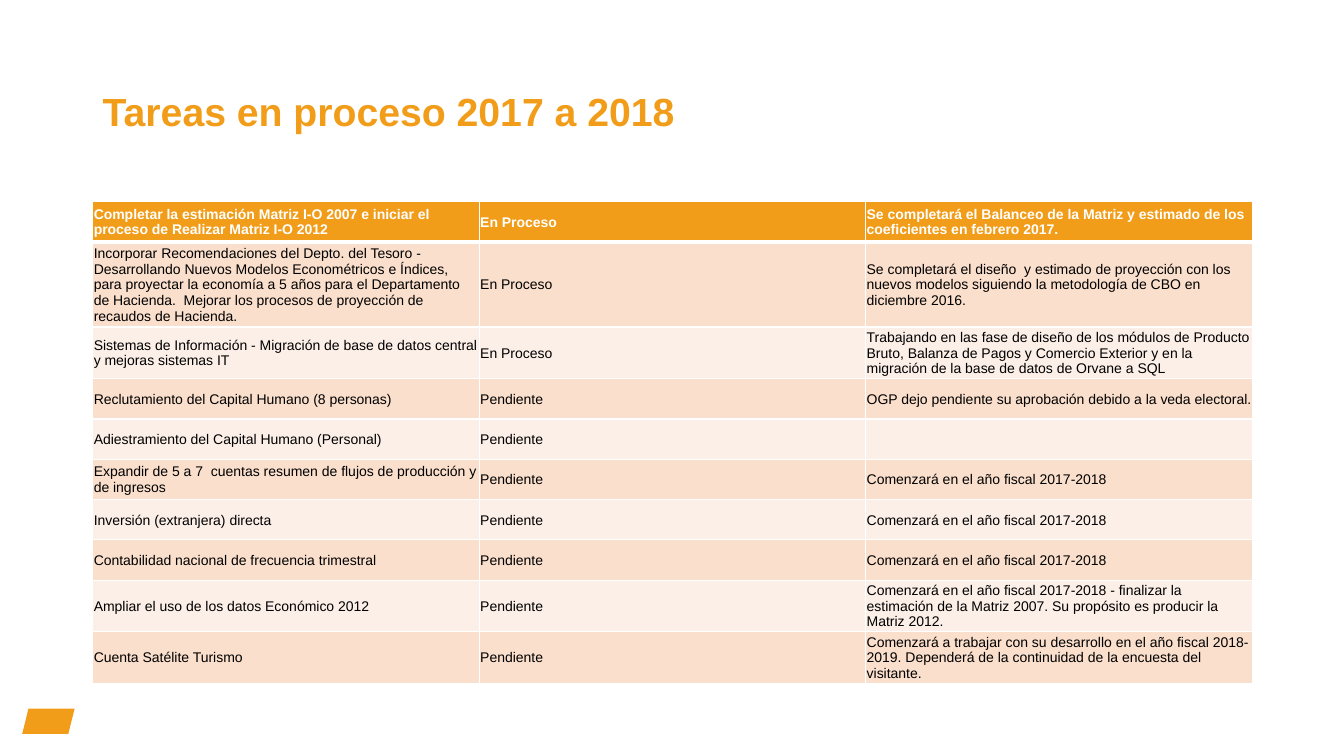
from lxml import etree
from pptx import Presentation
from pptx import util as u
from pptx.dml.color import RGBColor
from pptx.enum import shapes, text
from pptx.oxml.ns import qn

ORANGE = RGBColor(0xF1, 0x9D, 0x19)
PEACH = RGBColor(0xFA, 0xDF, 0xCC)
CREAM = RGBColor(0xFC, 0xEF, 0xE8)
WHITE = RGBColor(0xFF, 0xFF, 0xFF)
BLACK = RGBColor(0, 0, 0)

FISCAL = "Comenzará en el año fiscal 2017-2018"
TASKS = [
    ("Completar la estimación Matriz I-O 2007 e iniciar el proceso de Realizar Matriz I-O 2012",
     "En Proceso",
     "Se completará el Balanceo de la Matriz y estimado de los coeficientes en febrero 2017."),
    ("Incorporar Recomendaciones del Depto. del Tesoro - Desarrollando Nuevos Modelos "
     "Econométricos e Índices, para proyectar la economía a 5 años para el Departamento de "
     "Hacienda.  Mejorar los procesos de proyección de recaudos de Hacienda.",
     "En Proceso",
     "Se completará el diseño  y estimado de proyección con los nuevos modelos siguiendo la "
     "metodología de CBO en diciembre 2016."),
    ("Sistemas de Información - Migración de base de datos central y mejoras sistemas IT",
     "En Proceso",
     "Trabajando en las fase de diseño de los módulos de Producto Bruto, Balanza de Pagos y "
     "Comercio Exterior y en la migración de la base de datos de Orvane a SQL"),
    ("Reclutamiento del Capital Humano (8 personas)", "Pendiente",
     "OGP dejo pendiente su aprobación debido a la veda electoral."),
    ("Adiestramiento del Capital Humano (Personal)", "Pendiente", ""),
    ("Expandir de 5 a 7  cuentas resumen de flujos de producción y de ingresos",
     "Pendiente", FISCAL),
    ("Inversión (extranjera) directa", "Pendiente", FISCAL),
    ("Contabilidad nacional de frecuencia trimestral", "Pendiente", FISCAL),
    ("Ampliar el uso de los datos Económico 2012", "Pendiente",
     FISCAL + " - finalizar la estimación de la Matriz 2007. Su propósito es producir la "
     "Matriz 2012."),
    ("Cuenta Satélite Turismo", "Pendiente",
     "Comenzará a trabajar con su desarrollo en el año fiscal 2018-2019. Dependerá de la "
     "continuidad de la encuesta del visitante."),
]


def write(frame, words, size=10, color=BLACK, bold=False, space=1.0):
    par = frame.paragraphs[0]
    par.line_spacing = space
    par.font.size = u.Pt(size)
    if words:
        run = par.add_run()
        run.text = words
        run.font.name = "Arial"
        run.font.size = u.Pt(size)
        run.font.bold = bold
        run.font.color.rgb = color


def edge(cell, side, width):
    line = etree.SubElement(cell._tc.get_or_add_tcPr(), qn("a:ln" + side), w=str(u.Pt(width)))
    fill = etree.SubElement(line, qn("a:solidFill"))
    etree.SubElement(fill, qn("a:srgbClr"), val=str(WHITE))


deck = Presentation()
deck.slide_width = u.Inches(13.33)
deck.slide_height = u.Inches(7.5)
slide = deck.slides.add_slide(deck.slide_layouts[6])

mark = slide.shapes.add_shape(shapes.MSO_SHAPE.PARALLELOGRAM, u.Inches(0.22), u.Inches(7.03),
                              u.Inches(0.52), u.Inches(0.25))
mark.shadow.inherit = False
mark.fill.solid()
mark.fill.fore_color.rgb = ORANGE
mark.line.fill.background()

title = slide.shapes.add_textbox(u.Inches(0.92), u.Inches(0.4), u.Inches(11.5), u.Inches(1.45))
title.text_frame.word_wrap = True
title.text_frame.vertical_anchor = text.MSO_ANCHOR.MIDDLE
write(title.text_frame, "Tareas en proceso 2017 a 2018", size=28, color=ORANGE, bold=True,
      space=0.9)

table = slide.shapes.add_table(len(TASKS), 3, u.Inches(0.92), u.Inches(2), u.Inches(11.5),
                               u.Inches(0.4 * len(TASKS))).table
for r, task in enumerate(TASKS):
    head = r == 0
    for c, words in enumerate(task):
        cell = table.cell(r, c)
        cell.margin_left = cell.margin_right = cell.margin_top = u.Inches(0.01)
        cell.margin_bottom = 0
        cell.vertical_anchor = text.MSO_ANCHOR.MIDDLE
        for side in "LRTB":
            thick = (head and side == "B") or (r == 1 and side == "T")
            edge(cell, side, 3 if thick else 1)
        cell.fill.solid()
        cell.fill.fore_color.rgb = ORANGE if head else PEACH if r % 2 else CREAM
        write(cell.text_frame, words, color=WHITE if head else BLACK, bold=head)

deck.save("out.pptx")
